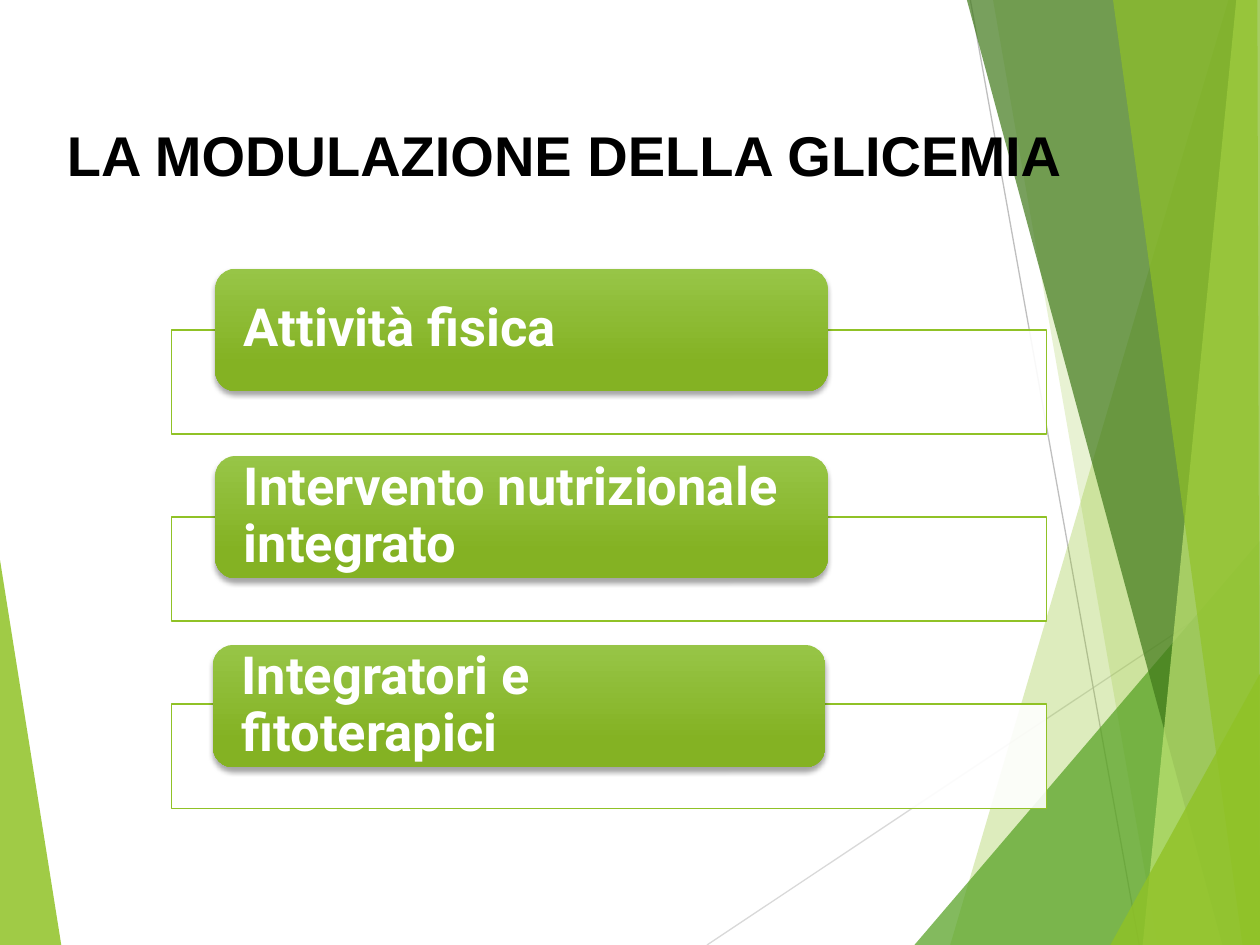
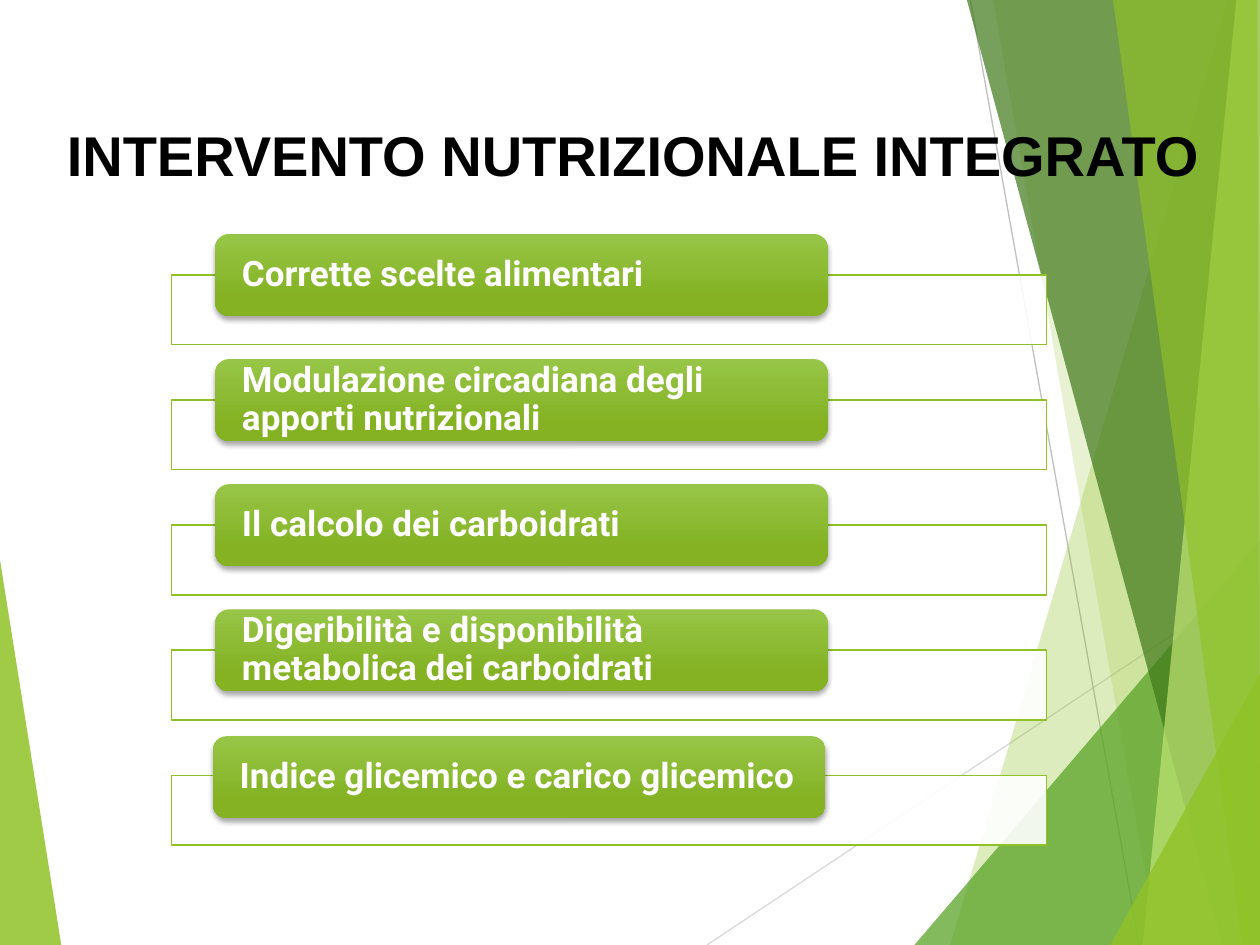
import pptx
import pptx.util
from lxml import etree
from pptx.dml.color import RGBColor
from pptx.enum.shapes import MSO_CONNECTOR, MSO_SHAPE
from pptx.enum.text import MSO_ANCHOR, MSO_AUTO_SIZE, PP_ALIGN
from pptx.oxml.ns import qn

Pt = pptx.util.Pt

WIDTH, HEIGHT = 720, 540
TITLE_ONLY = 5
TITLE_FONT, BODY_FONT = "Arial", "Roboto"

BLACK = RGBColor(0x00, 0x00, 0x00)
WHITE = RGBColor(0xFF, 0xFF, 0xFF)
LIME = RGBColor(0x90, 0xC2, 0x26)
PALE_LIME = RGBColor(0xC0, 0xE4, 0x74)
GREEN = RGBColor(0x54, 0xA0, 0x21)
DARK_GREEN = RGBColor(0x3F, 0x78, 0x19)
PILL_TOP = RGBColor(0x97, 0xC5, 0x47)
PILL_BOTTOM = RGBColor(0x84, 0xB2, 0x23)
LIGHT_GRAY = RGBColor(0xD9, 0xD9, 0xD9)
GRAY = RGBColor(0xBF, 0xBF, 0xBF)

RAYS = [
    ((404, 540), (720, 329.5), LIGHT_GRAY),
    ((554.5, 0), (651, 540), GRAY),
]
FACETS = [
    ([(702, 0), (543, 540), (720, 540), (720, 0)], LIME, 30),
    ([(567.5, 0), (661.5, 540), (720, 540), (720, 0)], LIME, 20),
    ([(522.5, 540), (720, 309), (720, 540)], GREEN, 72),
    ([(552.5, 0), (698.5, 540), (720, 540), (720, 0)], DARK_GREEN, 70),
    ([(706.5, 0), (653, 540), (720, 540), (720, 0)], PALE_LIME, 70),
    ([(636, 0), (710, 540), (720, 540), (718.5, 0)], LIME, 65),
    ([(634.5, 540), (720, 385), (720, 540)], LIME, 80),
]
LEFT_FACET = ([(0, 320), (35, 540), (0, 540)], LIME, 85)

SLIDES = [
    {
        "title": "LA MODULAZIONE DELLA GLICEMIA",
        "items": ["Attività fisica", "Intervento nutrizionale integrato",
                  "Integratori e fitoterapici"],
        "top": 153.5, "pitch": 107, "pill_height": 70, "size": 30,
    },
    {
        "title": "INTERVENTO NUTRIZIONALE INTEGRATO",
        "items": ["Corrette scelte alimentari",
                  "Modulazione circadiana degli apporti nutrizionali",
                  "Il calcolo dei carboidrati",
                  "Digeribilità e disponibilità metabolica dei carboidrati",
                  "Indice glicemico e carico glicemico"],
        "top": 133.7, "pitch": 71.5, "pill_height": 46.8, "size": 20,
    },
]


def fill_solid(sp, color, opacity):
    sp.fill.solid()
    sp.fill.fore_color.rgb = color
    clr = sp.element.spPr.find(qn("a:solidFill")).find(qn("a:srgbClr"))
    etree.SubElement(clr, qn("a:alpha"), val=str(opacity * 1000))


def add_shadow(sp):
    sp.shadow.inherit = False
    effects = sp.element.spPr.find(qn("a:effectLst"))
    shadow = etree.SubElement(effects, qn("a:outerShdw"), blurRad=str(Pt(3)),
                              dist=str(Pt(2)), dir="5400000", rotWithShape="0")
    clr = etree.SubElement(shadow, qn("a:srgbClr"), val=str(BLACK))
    etree.SubElement(clr, qn("a:alpha"), val="35000")


def format_text(tf, font, size, color):
    p = tf.paragraphs[0]
    p.alignment = PP_ALIGN.LEFT
    for r in p.runs:
        r.font.name = font
        r.font.size = Pt(size)
        r.font.bold = True
        r.font.color.rgb = color
    return p


def add_facet(s, left, top, points, color, opacity):
    (x, y), *rest = [(Pt(left + px), Pt(top + py)) for px, py in points]
    builder = s.shapes.build_freeform(x, y)
    builder.add_line_segments(rest, close=True)
    sp = builder.convert_to_shape()
    sp.shadow.inherit = False
    fill_solid(sp, color, opacity)
    sp.line.fill.background()


def add_ray(s, left, top, start, end, color):
    ray = s.shapes.add_connector(
        MSO_CONNECTOR.STRAIGHT, Pt(left + start[0]), Pt(top + start[1]),
        Pt(left + end[0]), Pt(top + end[1]))
    ray.line.color.rgb = color
    ray.line.width = Pt(0.75)
    etree.SubElement(ray.element.spPr, qn("a:effectLst"))


def add_backdrop(s, left, top):
    add_facet(s, left, top, *LEFT_FACET)
    for ray in RAYS:
        add_ray(s, left, top, *ray)
    for facet in FACETS:
        add_facet(s, left, top, *facet)


def add_title(s, text, left, top, width, height):
    title = s.shapes.title
    title.left, title.top = Pt(left), Pt(top)
    title.width, title.height = Pt(width), Pt(height)
    tf = title.text_frame
    tf.text = text
    tf.word_wrap = True
    tf.auto_size = MSO_AUTO_SIZE.SHAPE_TO_FIT_TEXT
    tf.vertical_anchor = MSO_ANCHOR.TOP
    format_text(tf, TITLE_FONT, 32, BLACK)
    title.element.getparent().append(title.element)


def add_frame(s, left, top, width, height):
    sp = s.shapes.add_shape(MSO_SHAPE.RECTANGLE, Pt(left), Pt(top),
                            Pt(width), Pt(height))
    sp.shadow.inherit = False
    fill_solid(sp, WHITE, 90)
    sp.line.color.rgb = LIME
    sp.line.width = Pt(1)


def add_pill(s, text, size, left, top, width, height):
    sp = s.shapes.add_shape(MSO_SHAPE.ROUNDED_RECTANGLE, Pt(left), Pt(top),
                            Pt(width), Pt(height))
    sp.fill.gradient()
    sp.fill.gradient_angle = 270
    stops = [(0, PILL_TOP), (0.78, PILL_BOTTOM)]
    for stop, (position, color) in zip(sp.fill.gradient_stops, stops):
        stop.position = position
        stop.color.rgb = color
    sp.line.fill.background()
    add_shadow(sp)
    tf = sp.text_frame
    tf.text = text
    tf.word_wrap = True
    tf.vertical_anchor = MSO_ANCHOR.MIDDLE
    tf.margin_left = tf.margin_right = Pt(13)
    tf.margin_top = tf.margin_bottom = 0
    format_text(tf, BODY_FONT, size, WHITE).line_spacing = 0.9


def add_list(s, items, size, left, top, width, pitch, pill_height):
    for i, text in enumerate(items):
        y = top + i * pitch
        dx, dy = (-1.3, 1) if i == len(items) - 1 else (0, 0)
        add_frame(s, left, y + pill_height / 2, width, pill_height * 0.85)
        add_pill(s, text, size, left + width * 0.05 + dx, y + dy,
                 width * 0.7, pill_height)


def add_list_slide(prs, content):
    s = prs.slides.add_slide(prs.slide_layouts[TITLE_ONLY])
    add_backdrop(s, 0, 0)
    add_list(s, content["items"], content["size"], 98, content["top"], 500,
             content["pitch"], content["pill_height"])
    add_title(s, content["title"], 31, 65.5, 680.5, 46)


def main():
    prs = pptx.Presentation()
    prs.slide_width, prs.slide_height = Pt(WIDTH), Pt(HEIGHT)
    for content in SLIDES:
        add_list_slide(prs, content)
    prs.save("out.pptx")


if __name__ == "__main__":
    main()
